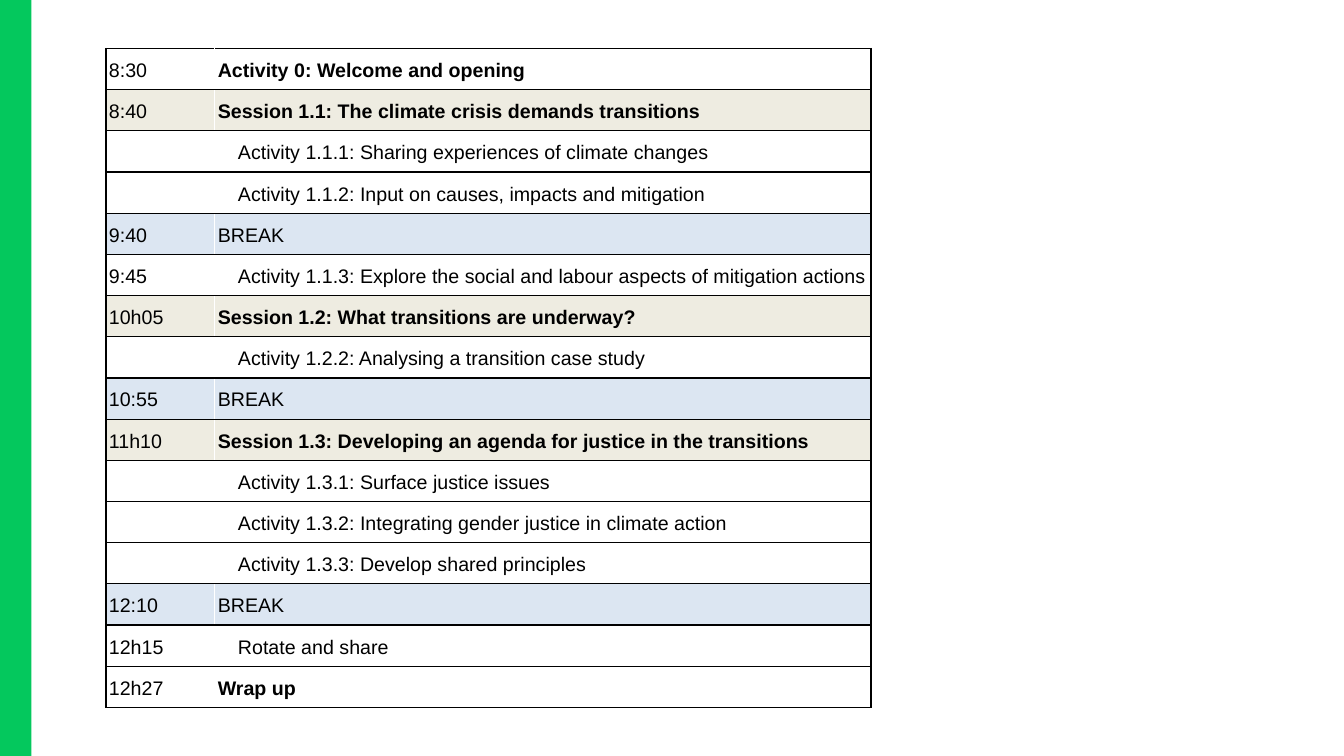
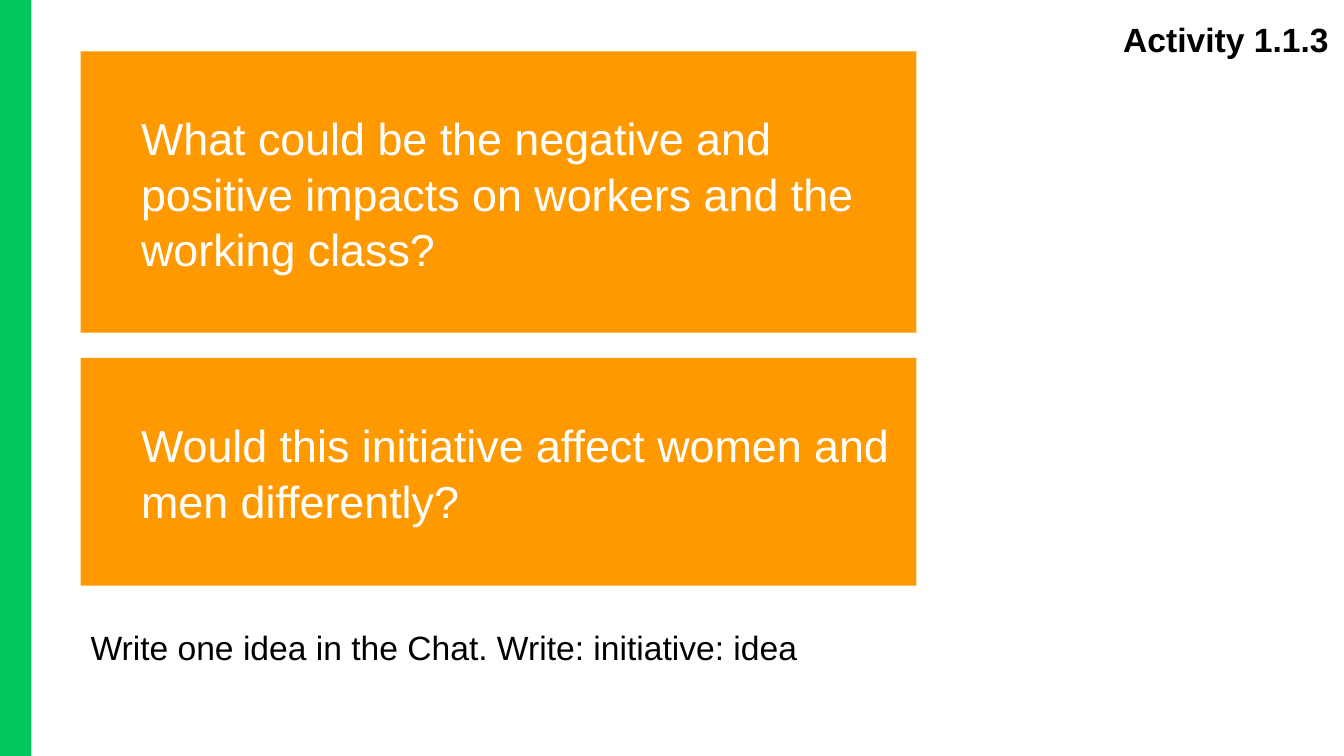
"""Build a workshop timetable slide and a question slide."""
from dataclasses import dataclass

from lxml.etree import SubElement
from pptx import Presentation
from pptx.dml.color import RGBColor
from pptx.enum.shapes import MSO_SHAPE
from pptx.enum.text import MSO_ANCHOR, MSO_AUTO_SIZE, PP_ALIGN
from pptx.oxml import parse_xml
from pptx.oxml.ns import nsdecls, qn
from pptx.util import Inches, Pt


@dataclass(frozen=True)
class Theme:
    """Hold the page size, font, colours and type sizes."""
    wide: float = 13.33
    high: float = 7.5
    font: str = "Arial"
    ink: str = "000000"
    paper: str = "FFFFFF"
    green: str = "04C85D"
    orange: str = "FF9900"
    sand: str = "EEECE1"
    sky: str = "DCE6F2"
    small: int = 14
    large: int = 24
    huge: int = 32


THEME = Theme()
SPLIT = (8.1, 48.83)
LEFT = 6
ROWS = [
    ("8:30", "Activity 0: Welcome and opening", "head"),
    ("8:40", "Session 1.1: The climate crisis demands transitions", "session"),
    ("", "Activity 1.1.1: Sharing experiences of climate changes", "item"),
    ("", "Activity 1.1.2: Input on causes, impacts and mitigation", "item"),
    ("9:40", "BREAK", "break"),
    ("9:45", "Activity 1.1.3: Explore the social and labour aspects of mitigation actions", "item"),
    ("10h05", "Session 1.2: What transitions are underway?", "session"),
    ("", "Activity 1.2.2: Analysing a transition case study", "item"),
    ("10:55", "BREAK", "break"),
    ("11h10", "Session 1.3: Developing an agenda for justice in the transitions", "session"),
    ("", "Activity 1.3.1: Surface justice issues", "item"),
    ("", "Activity 1.3.2: Integrating gender justice in climate action", "item"),
    ("", "Activity 1.3.3: Develop shared principles", "item"),
    ("12:10", "BREAK", "break"),
    ("12h15", "Rotate and share", "item"),
    ("12h27", "Wrap up", "head"),
]
FILLS = {"session": THEME.sand, "break": THEME.sky}
CARDS = [
    (6.8, 37.2, "What could be the negative and positive impacts on workers and the working class?"),
    (47.33, 30.13, "Would this initiative affect women and men differently?"),
]


def across(share):
    """Turn a percent of the slide width into a length."""
    return Inches(THEME.wide * share / 100)


def down(share):
    """Turn a percent of the slide height into a length."""
    return Inches(THEME.high * share / 100)


def area(left, top, width, height):
    """Turn percents of the slide into a position and size."""
    return across(left), down(top), across(width), down(height)


def write(para, text, size, color=THEME.ink, bold=False):
    """Add one styled run to a paragraph."""
    run = para.add_run()
    run.text = text
    font = run.font
    font.name, font.size, font.bold = THEME.font, Pt(size), bold
    font.color.rgb = RGBColor.from_string(color)


def block(slide, box, color):
    """Add a plain filled rectangle."""
    shape = slide.shapes.add_shape(MSO_SHAPE.RECTANGLE, *box)
    shape.shadow.inherit = False
    shape.fill.solid()
    shape.fill.fore_color.rgb = RGBColor.from_string(color)
    shape.line.fill.background()
    return shape


def band(deck, slide):
    """Put the green side band on the slide master."""
    part = block(slide, area(0, 0, 2.33, 100), THEME.green).element
    part.nvSpPr.cNvPr.set("id", "20")
    deck.slide_master.element.cSld.spTree.insert(2, part)


def edge(cell, sides):
    """Draw one point cell borders, given a colour for each side."""
    props = cell._tc.get_or_add_tcPr()
    for spot, (side, color) in enumerate(sides.items()):
        line = parse_xml(f'<a:ln{side} {nsdecls("a")} w="12700"/>')
        fill = SubElement(line, qn("a:solidFill"))
        SubElement(fill, qn("a:srgbClr"), val=color)
        props.insert(spot, line)


def fill_cell(cell, text, kind, main):
    """Style one table cell and write its text."""
    pad = Inches(0 if kind == "break" else 0.02)
    cell.margin_left = cell.margin_right = Inches(0.03)
    cell.margin_top = cell.margin_bottom = pad
    cell.vertical_anchor = MSO_ANCHOR.MIDDLE
    if kind in FILLS:
        cell.fill.solid()
        cell.fill.fore_color.rgb = RGBColor.from_string(FILLS[kind])
    else:
        cell.fill.background()
    ink, paper = THEME.ink, THEME.paper
    left, right = (paper, ink) if main else (ink, paper)
    edge(cell, {"L": left, "R": right, "T": ink, "B": ink})
    para = cell.text_frame.paragraphs[0]
    para.line_spacing = 1.15
    if main and kind == "item":
        para._p.get_or_add_pPr().set("marL", str(Inches(0.2)))
    if text:
        write(para, text, THEME.small, bold=main and kind in ("head", "session"))


def agenda(slide):
    """Add the timetable."""
    box = area(7.88, 6.4, sum(SPLIT), 87.2)
    table = slide.shapes.add_table(len(ROWS), len(SPLIT), *box).table
    table.first_row = table.horz_banding = False
    for col, share in zip(table.columns, SPLIT):
        col.width = across(share)
    for row, (time, topic, kind) in zip(table.rows, ROWS):
        fill_cell(row.cells[0], time, kind, False)
        fill_cell(row.cells[1], topic, kind, True)


def card(slide, top, height, text):
    """Add an orange question card."""
    shape = block(slide, area(LEFT, top, 62.19, height), THEME.orange)
    frame = shape.text_frame
    frame.word_wrap = True
    frame.vertical_anchor = MSO_ANCHOR.MIDDLE
    frame.margin_left = Inches(0.6)
    para = frame.paragraphs[0]
    para.alignment = PP_ALIGN.LEFT
    para.line_spacing = 1.04
    write(para, text, THEME.huge, THEME.paper)


def label(shape, text, bold=False):
    """Write a large line of text at the top left of a shape."""
    frame = shape.text_frame
    frame.word_wrap = True
    frame.auto_size = MSO_AUTO_SIZE.NONE
    frame.vertical_anchor = MSO_ANCHOR.TOP
    para = frame.paragraphs[0]
    para.alignment = PP_ALIGN.LEFT
    write(para, text, THEME.large, bold=bold)


def title(slide, box, text):
    """Move and fill the title placeholder."""
    head = slide.shapes.title
    head.left, head.top, head.width, head.height = box
    label(head, text, True)


def main():
    """Build and save the deck."""
    deck = Presentation()
    deck.slide_width, deck.slide_height = Inches(THEME.wide), Inches(THEME.high)
    plan = deck.slides.add_slide(deck.slide_layouts[6])
    band(deck, plan)
    agenda(plan)
    task = deck.slides.add_slide(deck.slide_layouts[5])
    title(task, area(82.82, 1.87, 17.18, 6.67), "Activity 1.1.3")
    for spec_row in CARDS:
        card(task, *spec_row)
    note = task.shapes.add_textbox(*area(LEFT, 82.27, 66.69, 6.67))
    label(note, "Write one idea in the Chat. Write: initiative: idea")
    deck.save("out.pptx")


if __name__ == "__main__":
    main()
